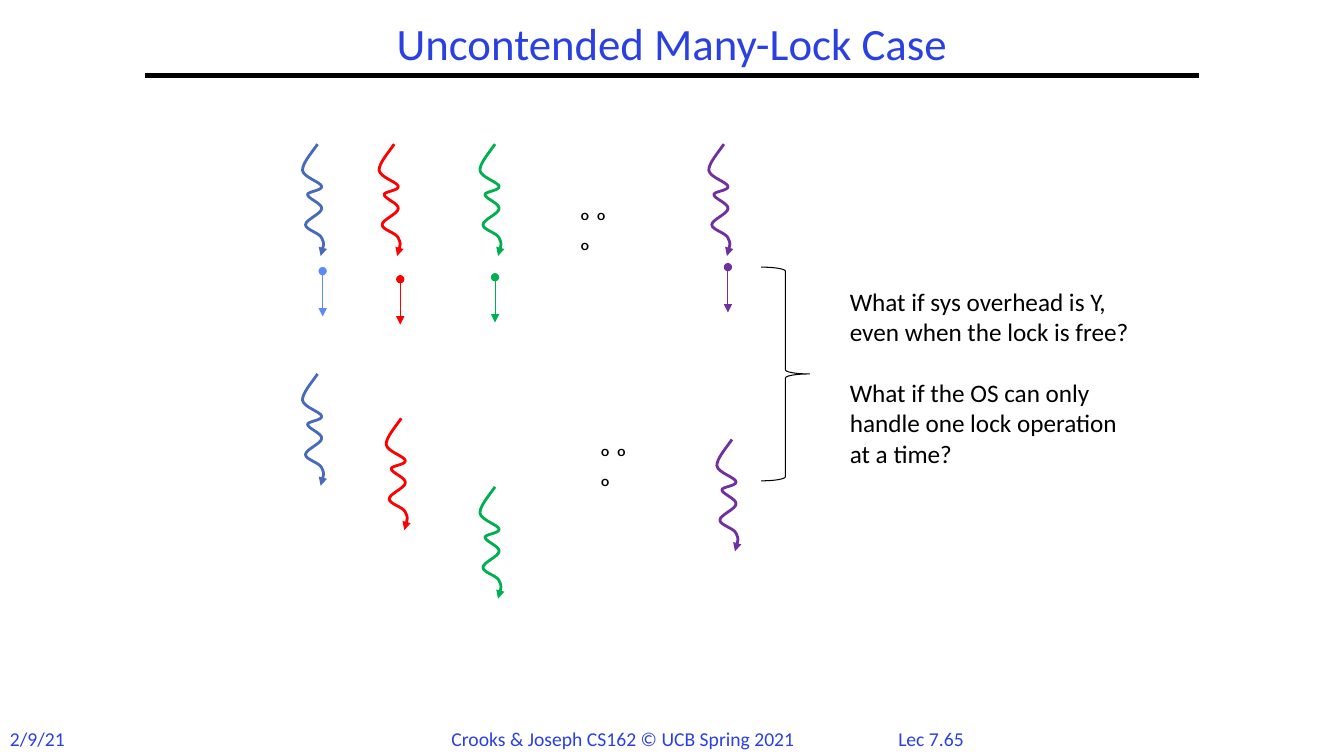
from dataclasses import dataclass

from pptx import Presentation
from pptx.dml.color import RGBColor
from pptx.enum.shapes import MSO_CONNECTOR, MSO_SHAPE
from pptx.enum.text import MSO_ANCHOR, PP_ALIGN
from pptx.oxml.ns import qn
from pptx.util import Inches, Pt
from lxml import etree

STRAIGHT = MSO_CONNECTOR.STRAIGHT
RIGHT_BRACE = MSO_SHAPE.RIGHT_BRACE
LEFT, CENTER = PP_ALIGN.LEFT, PP_ALIGN.CENTER
TOP, MIDDLE = MSO_ANCHOR.TOP, MSO_ANCHOR.MIDDLE


@dataclass(frozen=True)
class Theme:
    font: str = "Calibri"
    accent: str = "2A40E2"
    ink: str = "000000"
    blue: str = "486ABB"
    light_blue: str = "5B8AFB"
    red: str = "FF0000"
    green: str = "00B050"
    purple: str = "7030A0"
    title_size: int = 32
    body_size: int = 18
    footer_size: int = 14
    rule_width: float = 3
    thread_width: float = 2
    thin_width: float = 0.75


THEME = Theme()

# Cubic curve points of a running thread, as offsets from its start
THREAD_CURVE = [
    (-0.07, 0.10), (-0.15, 0.19), (-0.15, 0.26),
    (-0.14, 0.33), (0.04, 0.38), (0.04, 0.42),
    (0.05, 0.46), (-0.10, 0.47), (-0.10, 0.50),
    (-0.10, 0.54), (0.05, 0.59), (0.04, 0.64),
    (0.04, 0.69), (-0.12, 0.75), (-0.12, 0.80),
    (-0.12, 0.85), (0.02, 0.88), (0.04, 0.93),
    (0.07, 0.99), (0.05, 1.05), (0.03, 1.11),
]
LOCK_LENGTH = 0.45

# Thread colour, lock colour, then start of first run, lock and second run
THREADS = [
    (THEME.blue, THEME.light_blue, (0.15, 0), (0.2, 1.26), (0.15, 2.28)),
    (THEME.red, THEME.red, (0.91, 0), (0.97, 1.34), (0.98, 2.72)),
    (THEME.green, THEME.green, (1.91, 0), (1.91, 1.32), (1.91, 3.4)),
    (THEME.purple, THEME.purple, (4.18, 0), (4.22, 1.22), (4.26, 2.93)),
]
ELLIPSES = [(2.65, 0.56), (2.85, 2.9)]

QUESTIONS = [
    "What if sys overhead is Y, even when the lock is free?",
    "What if the OS can only handle one lock operation at a time?",
]
FOOTERS = [
    ("2/9/21", 0, 0.8, LEFT),
    ("Crooks & Joseph CS162 © UCB Spring 2021", 4.38, 3.76, LEFT),
    ("Lec 7.65", 8.75, 0.97, CENTER),
]


def style_line(shape, color, width, head=None, tail=None):
    shape.line.color.rgb = RGBColor.from_string(color)
    shape.line.width = Pt(width)
    outline = shape.line._get_or_add_ln()
    for tag, kind in (("a:headEnd", head), ("a:tailEnd", tail)):
        if kind:
            etree.SubElement(outline, qn(tag), type=kind)


def add_line(slide, start, end, color, width, head=None, tail=None):
    line = slide.shapes.add_connector(STRAIGHT, *map(Inches, (*start, *end)))
    style_line(line, color, width, head, tail)
    etree.SubElement(line._element.spPr, qn("a:effectLst"))


def add_text(slide, box, lines, size, color, align=LEFT, anchor=TOP):
    shape = slide.shapes.add_textbox(*map(Inches, box))
    frame = shape.text_frame
    frame.text = "\n".join(lines)
    frame.word_wrap = True
    frame.vertical_anchor = anchor
    for paragraph in frame.paragraphs:
        paragraph.alignment = align
        for run in paragraph.runs:
            run.font.name = THEME.font
            run.font.size = Pt(size)
            run.font.color.rgb = RGBColor.from_string(color)
    return frame


def add_thread(slide, start, color):
    x, y = start
    builder = slide.shapes.build_freeform(Inches(x), Inches(y))
    builder.add_line_segments(
        [(Inches(x + dx), Inches(y + dy)) for dx, dy in THREAD_CURVE], close=False)
    shape = builder.convert_to_shape()
    # Join every three points into one cubic curve
    segments = list(shape._element.iter(qn("a:lnTo")))
    for first in range(0, len(segments), 3):
        curve = etree.Element(qn("a:cubicBezTo"))
        segments[first].addprevious(curve)
        for segment in segments[first:first + 3]:
            curve.append(segment[0])
            segment.getparent().remove(segment)
    shape.fill.background()
    shape.shadow.inherit = False
    style_line(shape, color, THEME.thread_width, tail="triangle")


def add_header(slide, box):
    left, top, width, height = box
    frame = add_text(slide, box, ["Uncontended Many-Lock Case"],
                     THEME.title_size, THEME.accent, CENTER, MIDDLE)
    frame.paragraphs[0].line_spacing = 0.9
    bottom = top + height
    add_line(slide, (left, bottom), (left + width, bottom), THEME.ink, THEME.rule_width)


def add_threads(slide, box):
    left, top = box[:2]

    def place(offset):
        return left + offset[0], top + offset[1]

    for color, lock_color, first_run, lock, second_run in THREADS:
        add_thread(slide, place(first_run), color)
        x, y = place(lock)
        add_line(slide, (x, y), (x, y + LOCK_LENGTH), lock_color,
                 THEME.thin_width, "oval", "triangle")
        add_thread(slide, place(second_run), color)
    for offset in ELLIPSES:
        add_text(slide, (*place(offset), 0.62, 0.4), ["º º º"], THEME.body_size, THEME.ink)


def add_questions(slide, box):
    left, top, width, height = box
    brace = slide.shapes.add_shape(
        RIGHT_BRACE, *map(Inches, (left, top, 0.48, height)))
    brace.fill.background()
    brace.shadow.inherit = False
    style_line(brace, THEME.ink, THEME.thin_width)
    text_box = (left + 0.78, top + 0.14, width - 0.78, 1.92)
    frame = add_text(slide, text_box, QUESTIONS, THEME.body_size, THEME.ink)
    frame.paragraphs[1].space_before = Pt(22)


def add_footer(slide, box):
    left, top, _, height = box
    for text, offset, width, align in FOOTERS:
        add_text(slide, (left + offset, top, width, height), [text],
                 THEME.footer_size, THEME.accent, align)


def main():
    presentation = Presentation()
    presentation.slide_width = Inches(13.33)
    presentation.slide_height = Inches(7.5)
    slide = presentation.slides.add_slide(presentation.slide_layouts[6])
    add_header(slide, (1.44, 0.17, 10.45, 0.58))
    add_threads(slide, (3, 1.43, 4.31, 4.5))
    add_questions(slide, (7.55, 2.65, 3.87, 2.12))
    add_footer(slide, (0, 7.16, 13.33, 0.34))
    presentation.save("out.pptx")


if __name__ == "__main__":
    main()
